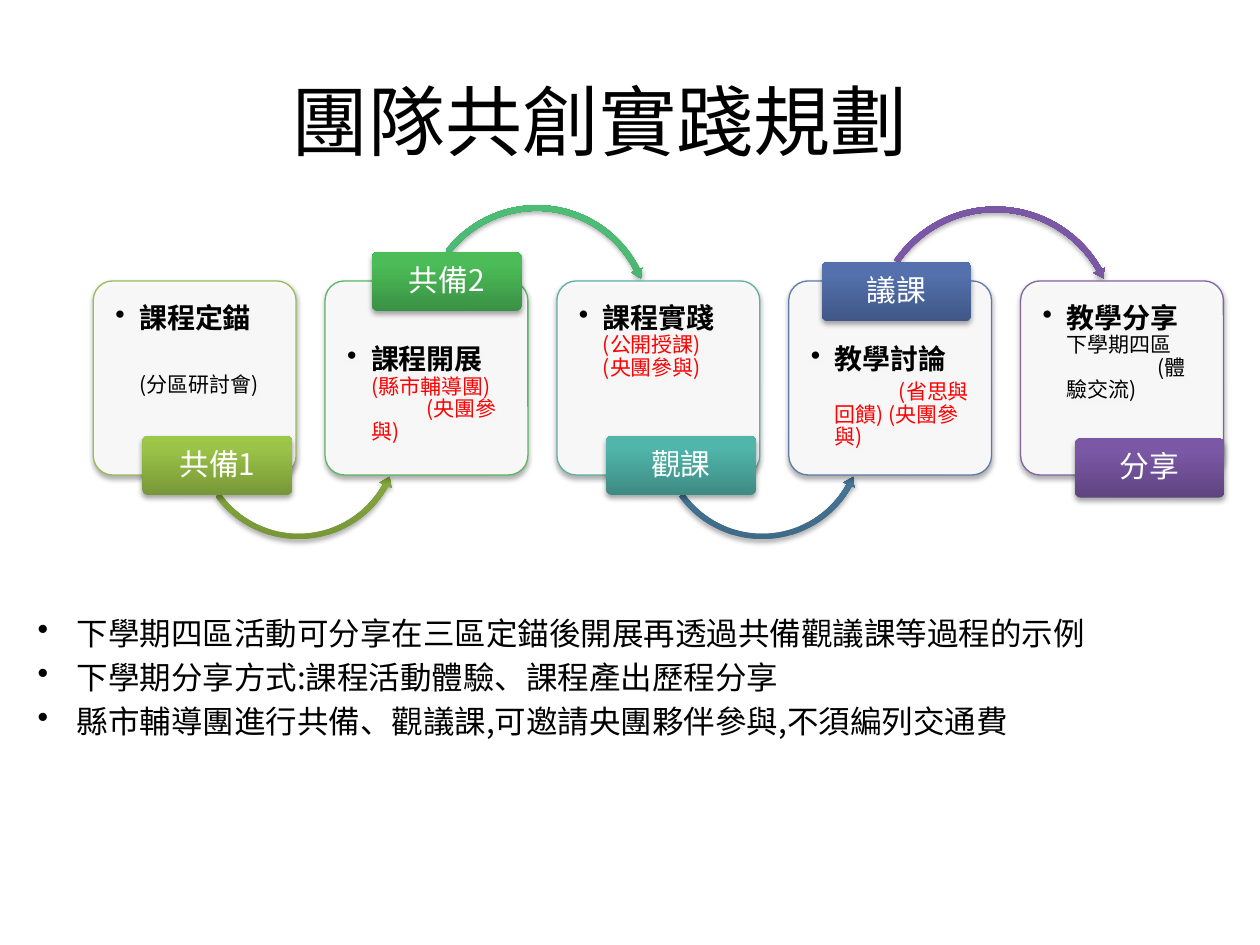
from dataclasses import dataclass, field

from pptx import Presentation
from pptx.dml.color import RGBColor
from pptx.enum.shapes import MSO_SHAPE
from pptx.enum.text import MSO_ANCHOR, PP_ALIGN
from pptx.oxml import parse_xml
from pptx.oxml.ns import nsdecls, qn
from pptx.oxml.xmlchemy import OxmlElement
from pptx.util import Inches, Pt

ROUNDED = MSO_SHAPE.ROUNDED_RECTANGLE
ARC_OVER = MSO_SHAPE.CIRCULAR_ARROW
ARC_UNDER = MSO_SHAPE.LEFT_CIRCULAR_ARROW
TOP, MIDDLE = MSO_ANCHOR.TOP, MSO_ANCHOR.MIDDLE
LEFT, CENTER = PP_ALIGN.LEFT, PP_ALIGN.CENTER

BLACK = RGBColor(0x00, 0x00, 0x00)
WHITE = RGBColor(0xFF, 0xFF, 0xFF)
RED = RGBColor(0xFF, 0x00, 0x00)
LIME_LINE = RGBColor(0x9B, 0xBB, 0x59)
GREEN_LINE = RGBColor(0x5C, 0xB5, 0x65)
TEAL_LINE = RGBColor(0x5E, 0xAF, 0xA6)
BLUE_LINE = RGBColor(0x61, 0x79, 0xA8)
PURPLE_LINE = RGBColor(0x80, 0x64, 0xA2)


def shades(*codes):
    return [RGBColor.from_string(code) for code in codes]


LIME = shades("779737", "9BC348", "9DC746")
GREEN = shades("3A9144", "4CBC58", "4ABF57")
SEA_GREEN = shades("3B8F5A", "4DBA75", "4BBD75")
TEAL = shades("3D8B83", "50B5AA", "4EB8AC")
STEEL = shades("3F6A88", "528AB0", "518BB3")
BLUE = shades("405786", "5471AE", "5271B0")
PURPLE = shades("5F4480", "7B58A6", "7C57A8")

UNDER_SHAPE = (0.026, 3.2, 17.32, 86.62, 0.031)
OVER_GREEN = (0.024, 2.84, 200.1, 130.45, 0.027)
OVER_PURPLE = (0.022, 2.67, 198.37, 128.55, 0.026)


@dataclass
class Note:
    text: str
    color: RGBColor = BLACK
    first_indent: float = 0
    before: float = 0


@dataclass
class Arc:
    kind: int
    left: float
    top: float
    size: float
    shape: tuple
    colors: list


@dataclass
class Step:
    title: str
    notes: list
    line: RGBColor
    label: str
    label_left: float
    label_top: float
    colors: list
    arc: Arc = None
    drop: float = field(default=0)


STEPS = [
    Step("課程定錨", [Note("(分區研討會)", before=23)], LIME_LINE,
         "共備1", 1.13, 3.46, LIME,
         Arc(ARC_UNDER, 1.53, 2.63, 1.68, UNDER_SHAPE, LIME)),
    Step("課程開展", [Note("(縣市輔導團)", RED), Note("(央團參與)", RED, 0.44)],
         GREEN_LINE, "共備2", 2.95, 2, GREEN,
         Arc(ARC_OVER, 3.32, 1.6, 1.88, OVER_GREEN, SEA_GREEN), 0.33),
    Step("課程實踐", [Note("(公開授課)", RED), Note("(央團參與)", RED)],
         TEAL_LINE, "觀課", 4.81, 3.46, TEAL,
         Arc(ARC_UNDER, 5.21, 2.63, 1.68, UNDER_SHAPE, STEEL)),
    Step("教學討論", [Note("(省思與回饋) (央團參與)", RED, 0.51, 3)],
         BLUE_LINE, "議課", 6.52, 2.08, BLUE,
         Arc(ARC_OVER, 6.9, 1.61, 2, OVER_PURPLE, PURPLE), 0.33),
    Step("教學分享", [Note("下學期四區"), Note("(體驗交流)", first_indent=0.72)],
         PURPLE_LINE, "分享", 8.53, 3.48, PURPLE),
]
CARD_LEFT, CARD_STEP, CARD_TOP = 0.74, 1.84, 2.23

POINTS = [
    "下學期四區活動可分享在三區定錨後開展再透過共備觀議課等過程的示例",
    "下學期分享方式:課程活動體驗、課程產出歷程分享",
    "縣市輔導團進行共備、觀議課,可邀請央團夥伴參與,不須編列交通費",
]


class SlideBuilder:
    font = "Noto Sans CJK SC"

    def __init__(self, page):
        self.page = page

    def format(self, para, size, color, bold=False, align=LEFT, spacing=0.9):
        para.alignment = align
        para.line_spacing = spacing
        para.space_before = para.space_after = Pt(0)
        for span in para.runs:
            span.font.size = Pt(size)
            span.font.bold = bold
            span.font.color.rgb = color
            span.font.name = self.font
            east_asian = OxmlElement("a:ea")
            east_asian.set("typeface", self.font)
            span.font._element.append(east_asian)

    def indent(self, para, margin, first, bullet=False):
        properties = para._p.get_or_add_pPr()
        properties.set("marL", str(Inches(margin)))
        properties.set("indent", str(Inches(first)))
        if bullet:
            mark = OxmlElement("a:buChar")
            mark.set("char", "•")
            properties.append(mark)

    def shadow(self, shape):
        shape.shadow.inherit = False
        effects = shape._element.spPr.find(qn("a:effectLst"))
        effects.append(parse_xml(
            f'<a:outerShdw {nsdecls("a")} blurRad="{Pt(3.1)}" dist="{Pt(1.8)}" '
            'dir="5400000" rotWithShape="0"><a:srgbClr val="000000">'
            '<a:alpha val="35000"/></a:srgbClr></a:outerShdw>'))

    def gradient(self, shape, colors):
        shape.fill.gradient()
        old = shape._element.spPr.find(qn("a:gradFill"))
        stops = "".join(
            f'<a:gs pos="{place * 1000}"><a:srgbClr val="{color}"/></a:gs>'
            for place, color in zip((0, 80, 100), colors))
        old.getparent().replace(old, parse_xml(
            f'<a:gradFill {nsdecls("a")} rotWithShape="1"><a:gsLst>{stops}</a:gsLst>'
            '<a:lin ang="16200000" scaled="0"/></a:gradFill>'))
        shape.line.fill.background()
        self.shadow(shape)

    def shape(self, kind, left, top, width, height, adjustments):
        shape = self.page.shapes.add_shape(
            kind, Inches(left), Inches(top), Inches(width), Inches(height))
        for index, value in enumerate(adjustments):
            shape.adjustments[index] = value
        return shape

    def frame(self, shape, anchor, side, top, bottom):
        frame = shape.text_frame
        frame.word_wrap = True
        frame.vertical_anchor = anchor
        frame.margin_left = frame.margin_right = Inches(side)
        frame.margin_top, frame.margin_bottom = Inches(top), Inches(bottom)
        return frame

    def card(self, left, step):
        card = self.shape(ROUNDED, left, CARD_TOP, 1.61, 1.54, [0.1])
        card.fill.solid()
        card.fill.fore_color.rgb = WHITE
        alpha = OxmlElement("a:alpha")
        alpha.set("val", "90000")
        card._element.spPr.find(qn("a:solidFill"))[0].append(alpha)
        card.line.color.rgb = step.line
        card.line.width = Pt(0.75)
        self.shadow(card)
        frame = self.frame(card, TOP, 0.13, 0.14 + step.drop, 0)
        frame.text = step.title
        title = frame.paragraphs[0]
        self.format(title, 16, BLACK, bold=True)
        self.indent(title, 0.19, -0.19, bullet=True)
        for note in step.notes:
            para = frame.add_paragraph()
            para.text = note.text
            self.format(para, 12, note.color)
            para.space_before = Pt(note.before)
            self.indent(para, 0.19, note.first_indent)

    def arc(self, arc):
        arrow = self.shape(arc.kind, arc.left, arc.top, arc.size, arc.size, arc.shape)
        self.gradient(arrow, arc.colors)

    def label(self, step):
        label = self.shape(ROUNDED, step.label_left, step.label_top, 1.19, 0.47, [0.1])
        self.gradient(label, step.colors)
        frame = self.frame(label, MIDDLE, 0.04, 0.02, 0.02)
        frame.text = step.label
        self.format(frame.paragraphs[0], 17, WHITE, align=CENTER)

    def title(self, text):
        title = self.page.shapes.title
        title.left, title.top = Inches(0.51), Inches(-0.27)
        title.width, title.height = Inches(8.5), Inches(2.44)
        frame = self.frame(title, MIDDLE, 0.1, 0.05, 0.05)
        frame.text = text
        self.format(frame.paragraphs[0], 44, BLACK, align=CENTER, spacing=1.0)

    def bullets(self, points):
        box = self.page.shapes.add_textbox(
            Inches(0.2), Inches(4.13), Inches(9.21), Inches(2.44))
        frame = self.frame(box, MIDDLE, 0.1, 0.05, 0.05)
        frame.text = "\n".join(points)
        for para in frame.paragraphs:
            self.format(para, 18, BLACK, spacing=Pt(25))
            self.indent(para, 0.31, -0.31, bullet=True)


def main():
    deck = Presentation()
    deck.slide_width, deck.slide_height = Inches(10), Inches(7.5)
    builder = SlideBuilder(deck.slides.add_slide(deck.slide_layouts[5]))
    builder.title("團隊共創實踐規劃")
    for index, step in enumerate(STEPS):
        builder.card(CARD_LEFT + index * CARD_STEP, step)
        if step.arc:
            builder.arc(step.arc)
        builder.label(step)
    builder.bullets(POINTS)
    deck.save("out.pptx")


if __name__ == "__main__":
    main()
